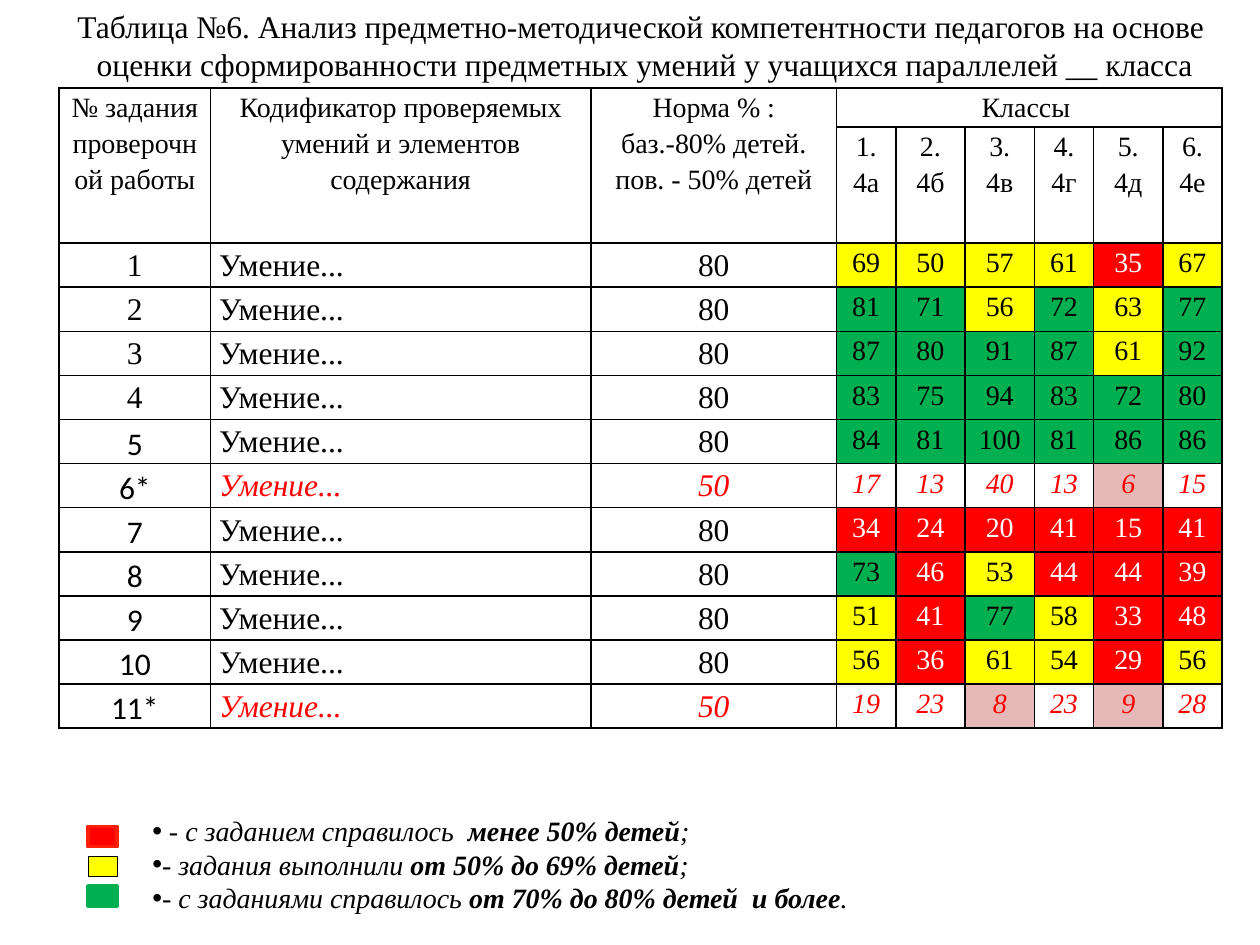
from dataclasses import dataclass

from lxml.etree import SubElement
from pptx import Presentation
from pptx.dml.color import RGBColor
from pptx.enum.shapes import MSO_SHAPE as Shape
from pptx.enum.text import MSO_ANCHOR as Anchor, MSO_AUTO_SIZE as AutoSize, PP_ALIGN as Align
from pptx.oxml.ns import qn
from pptx.util import Inches, Pt


@dataclass(frozen=True)
class Theme:
    serif: str = "Times New Roman"
    sans: str = "Calibri"
    large: int = 18
    small: int = 16
    black: str = "000000"
    white: str = "FFFFFF"
    red: str = "FF0000"
    red_edge: str = "FD1E07"
    yellow: str = "FFFF00"
    green: str = "00B050"
    pink: str = "E6B9B8"


THEME = Theme()

TITLE = [
    "Таблица №6. Анализ предметно-методической компетентности педагогов на основе ",
    "оценки сформированности предметных умений у учащихся параллелей __ класса",
]
HEADINGS = [
    ["№ задания проверочной работы"],
    ["Кодификатор проверяемых умений и элементов содержания"],
    ["Норма % :", "баз.-80% детей.", "пов. - 50% детей"],
    ["Классы "],
]
CLASSES = ["4а", "4б", "4в", "4г", "4д", "4е"]
RESULTS = [
    [69, 50, 57, 61, 35, 67],
    [81, 71, 56, 72, 63, 77],
    [87, 80, 91, 87, 61, 92],
    [83, 75, 94, 83, 72, 80],
    [84, 81, 100, 81, 86, 86],
    [17, 13, 40, 13, 6, 15],
    [34, 24, 20, 41, 15, 41],
    [73, 46, 53, 44, 44, 39],
    [51, 41, 77, 58, 33, 48],
    [56, 36, 61, 54, 29, 56],
    [19, 23, 8, 23, 9, 28],
]
ADVANCED_TASKS = {6, 11}
FIRST_SANS_TASK = 5
COLUMN_WIDTHS = [1.2, 3.02, 1.95, 0.47, 0.55, 0.55, 0.47, 0.55, 0.47]
ROW_HEIGHTS = [0.31, 0.61] + [0.35] * len(RESULTS)
LEGEND = [
    (" - с заданием справилось  ", "менее 50% детей", ";"),
    ("- задания выполнили ", "от 50% до 69% детей", ";"),
    ("- с заданиями справилось ", "от 70% до 80% детей  и более", "."),
]
SWATCHES = [
    (THEME.red, THEME.red_edge, 2),
    (THEME.yellow, THEME.black, 0.25),
    (THEME.green, THEME.green, 2),
]


def score_colours(score, advanced):
    if advanced:
        return (THEME.pink if score < 10 else None), THEME.red
    if score < 50:
        return THEME.red, THEME.white
    return (THEME.yellow if score < 70 else THEME.green), THEME.black


class SlideBuilder:
    def __init__(self, slide, theme):
        self.slide = slide
        self.theme = theme

    def run(self, paragraph, text, size, colour=None, font=None, italic=False, bold=False):
        run = paragraph.add_run()
        run.text = text
        run.font.name = font or self.theme.serif
        run.font.size = Pt(size)
        run.font.italic = italic
        run.font.bold = bold
        run.font.color.rgb = RGBColor.from_string(colour or self.theme.black)

    def paragraphs(self, frame, count):
        return [frame.paragraphs[0]] + [frame.add_paragraph() for _ in range(count - 1)]

    def title(self, lines, left, top, width, height):
        heading = self.slide.shapes.title
        heading.left, heading.top = Inches(left), Inches(top)
        heading.width, heading.height = Inches(width), Inches(height)
        frame = heading.text_frame
        frame.word_wrap = False
        frame.auto_size = AutoSize.SHAPE_TO_FIT_TEXT
        frame.vertical_anchor = Anchor.MIDDLE
        for paragraph, line in zip(self.paragraphs(frame, len(lines)), lines):
            paragraph.alignment = Align.CENTER
            self.run(paragraph, line, self.theme.large)

    def table(self, left, top, widths, heights):
        grid = self.slide.shapes.add_table(
            len(heights), len(widths), Inches(left), Inches(top),
            Inches(sum(widths)), Inches(sum(heights))).table
        grid.first_row = grid.horz_banding = False
        for column, width in zip(grid.columns, widths):
            column.width = Inches(width)
        for row, height in zip(grid.rows, heights):
            row.height = Inches(height)
            for cell in row.cells:
                self.border(cell)
                cell.fill.background()
                cell.margin_left = cell.margin_right = Inches(0.07)
                cell.margin_top = cell.margin_bottom = 0
        return grid

    def border(self, cell):
        properties = cell._tc.get_or_add_tcPr()
        for side in ("a:lnL", "a:lnR", "a:lnT", "a:lnB"):
            edge = SubElement(properties, qn(side), w=str(Pt(1)))
            paint = SubElement(edge, qn("a:solidFill"))
            SubElement(paint, qn("a:srgbClr"), val=self.theme.black)

    def cell(self, cell, lines, size, align=Align.CENTER, fill=None, **style):
        if fill:
            cell.fill.solid()
            cell.fill.fore_color.rgb = RGBColor.from_string(fill)
        for paragraph, line in zip(self.paragraphs(cell.text_frame, len(lines)), lines):
            paragraph.alignment = align
            paragraph.line_spacing = 1.15
            self.run(paragraph, line, size, **style)

    def legend(self, entries, left, top, width, height):
        frame = self.slide.shapes.add_textbox(
            Inches(left), Inches(top), Inches(width), Inches(height)).text_frame
        frame.word_wrap = True
        frame.auto_size = AutoSize.SHAPE_TO_FIT_TEXT
        for paragraph, parts in zip(self.paragraphs(frame, len(entries)), entries):
            properties = paragraph._p.get_or_add_pPr()
            properties.set("marL", "0")
            properties.set("indent", str(Inches(0.72)))
            SubElement(properties, qn("a:buFont"), typeface="Arial")
            SubElement(properties, qn("a:buChar"), char="•")
            for position, part in enumerate(parts):
                self.run(paragraph, part, self.theme.small, italic=True, bold=position == 1)

    def swatch(self, left, top, fill, edge, weight):
        box = self.slide.shapes.add_shape(
            Shape.RECTANGLE, Inches(left), Inches(top), Inches(0.23), Inches(0.16))
        box.shadow.inherit = False
        box.fill.solid()
        box.fill.fore_color.rgb = RGBColor.from_string(fill)
        box.line.color.rgb = RGBColor.from_string(edge)
        box.line.width = Pt(weight)


def main():
    deck = Presentation()
    deck.slide_width, deck.slide_height = Inches(10), Inches(7.5)
    builder = SlideBuilder(deck.slides.add_slide(deck.slide_layouts[5]), THEME)
    builder.title(TITLE, 0.47, 0, 9.3, 0.71)

    grid = builder.table(0.47, 0.7, COLUMN_WIDTHS, ROW_HEIGHTS)
    for column, lines in enumerate(HEADINGS):
        builder.cell(grid.cell(0, column), lines, THEME.small)
    for column in range(3):
        grid.cell(0, column).merge(grid.cell(1, column))
    grid.cell(0, 3).merge(grid.cell(0, 8))
    for number, name in enumerate(CLASSES, 1):
        builder.cell(grid.cell(1, number + 2), [f"{number}.", name], THEME.small)

    for task, scores in enumerate(RESULTS, 1):
        advanced = task in ADVANCED_TASKS
        row = task + 1
        label = f"{task}*" if advanced else str(task)
        label_font = THEME.sans if task >= FIRST_SANS_TASK else THEME.serif
        style = {"colour": THEME.red if advanced else THEME.black, "italic": advanced}
        builder.cell(grid.cell(row, 0), [label], THEME.large, font=label_font)
        builder.cell(grid.cell(row, 1), ["Умение..."], THEME.large, Align.LEFT, **style)
        builder.cell(grid.cell(row, 2), ["50" if advanced else "80"], THEME.large, **style)
        for column, score in enumerate(scores, 3):
            fill, colour = score_colours(score, advanced)
            builder.cell(grid.cell(row, column), [str(score)], THEME.small,
                         fill=fill, colour=colour, italic=advanced)

    builder.legend(LEGEND, 0.39, 6.41, 9.61, 0.91)
    for index, (fill, edge, weight) in enumerate(SWATCHES):
        builder.swatch(0.7, 6.56 + 0.235 * index, fill, edge, weight)
    deck.save("out.pptx")


if __name__ == "__main__":
    main()
